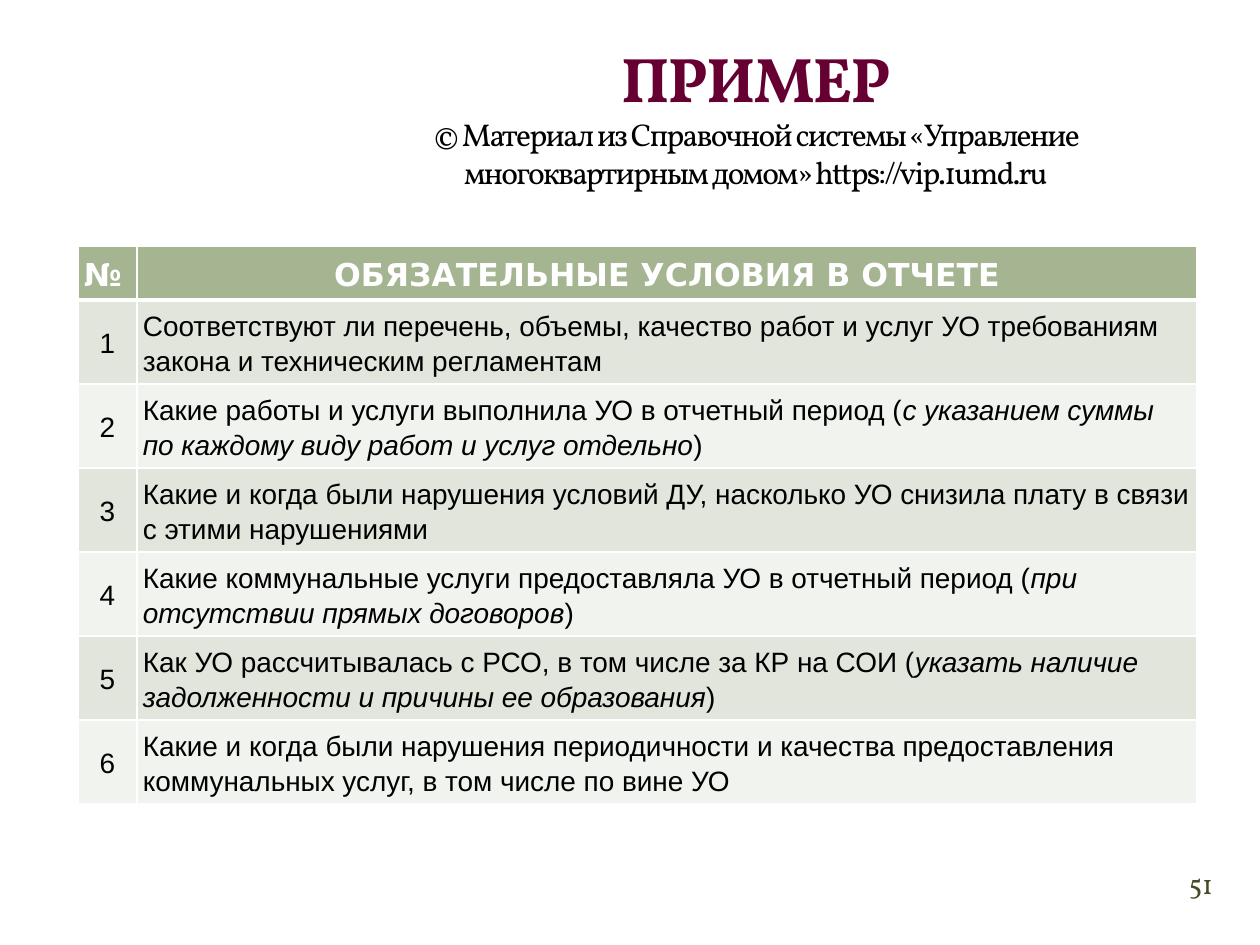
from dataclasses import dataclass

from lxml.etree import SubElement
from pptx import Presentation
from pptx.dml.color import RGBColor
from pptx.enum.text import MSO_ANCHOR, PP_ALIGN
from pptx.oxml.ns import qn
from pptx.util import Pt


@dataclass(frozen=True)
class Theme:
    serif: str = "Vollkorn"
    header_font: str = "DejaVu Sans"
    body_font: str = "Arial"
    title_size: int = 36
    text_size: int = 18
    small_size: int = 16
    title: str = "660033"
    text: str = "000000"
    number: str = "444D26"
    white: str = "FFFFFF"
    header_fill: str = "A5B592"
    row_fills: tuple = ("E1E5DC", "F0F3EE")


THEME = Theme()
HEADER = ("№", "ОБЯЗАТЕЛЬНЫЕ УСЛОВИЯ В ОТЧЕТЕ")
# Each condition: plain text, then an optional note set in italics
CONDITIONS = [
    ("Соответствуют ли перечень, объемы, качество работ и услуг УО "
     "требованиям закона и техническим регламентам", ""),
    ("Какие работы и услуги выполнила УО в отчетный период",
     "с указанием суммы по каждому виду работ и услуг отдельно"),
    ("Какие и когда были нарушения условий ДУ, насколько УО снизила плату "
     "в связи с этими нарушениями", ""),
    ("Какие коммунальные услуги предоставляла УО в отчетный период",
     "при отсутствии прямых договоров"),
    ("Как УО рассчитывалась с РСО, в том числе за КР на СОИ",
     "указать наличие задолженности и причины ее образования"),
    ("Какие и когда были нарушения периодичности и качества предоставления "
     "коммунальных услуг, в том числе по вине УО", ""),
]


def px(length):
    return round(length * 914400 / 126)


def style_font(font, size, color, name=None, bold=False):
    font.size = Pt(size)
    font.color.rgb = RGBColor.from_string(color)
    font.bold = bold
    if name:
        font.name = name


def add_text_box(slide, left, top, width, height, anchor):
    shape = slide.shapes.add_textbox(px(left), px(top), px(width), px(height))
    frame = shape.text_frame
    frame.word_wrap = True
    frame.vertical_anchor = anchor
    paragraph = frame.paragraphs[0]
    paragraph.alignment = PP_ALIGN.CENTER
    return frame, paragraph


def add_title(slide):
    paragraph = add_text_box(slide, 315, 21, 882, 176, MSO_ANCHOR.BOTTOM)[1]
    paragraph.font.name = THEME.serif
    heading = paragraph.add_run()
    heading.text = "ПРИМЕР"
    style_font(heading.font, THEME.title_size, THEME.title, THEME.serif, True)
    paragraph.add_line_break()
    credit = paragraph.add_run()
    credit.text = ("© Материал из Справочной системы «Управление "
                   "многоквартирным домом» https://vip.1umd.ru")
    style_font(credit.font, THEME.text_size, THEME.text, THEME.serif)
    for run in (heading, credit):
        run.font._element.set("spc", "-100")


def add_page_number(slide):
    frame, paragraph = add_text_box(slide, 1159, 852, 84, 63, MSO_ANCHOR.MIDDLE)
    frame.margin_left = frame.margin_right = 0
    frame.margin_top = frame.margin_bottom = 0
    paragraph.text = "51"
    style_font(paragraph.font, THEME.small_size, THEME.number, THEME.serif)


def set_borders(cell, bottom_width):
    # Borders come before the fill in the cell properties
    properties = cell._tc.get_or_add_tcPr()
    for side, width in (("L", 1), ("R", 1), ("T", 1), ("B", bottom_width)):
        line = SubElement(properties, qn(f"a:ln{side}"), w=str(Pt(width)))
        fill = SubElement(line, qn("a:solidFill"))
        SubElement(fill, qn("a:srgbClr"), val=THEME.white)


def prepare_cell(cell, fill, centered, bottom_width=1):
    set_borders(cell, bottom_width)
    cell.fill.solid()
    cell.fill.fore_color.rgb = RGBColor.from_string(fill)
    cell.margin_left = cell.margin_right = px(6)
    cell.margin_top = cell.margin_bottom = px(6)
    cell.vertical_anchor = MSO_ANCHOR.MIDDLE
    paragraph = cell.text_frame.paragraphs[0]
    paragraph.alignment = PP_ALIGN.CENTER if centered else PP_ALIGN.LEFT
    paragraph.line_spacing = 1.15
    return paragraph


def add_condition_text(paragraph, text, note):
    parts = [(text + " (", False), (note, True), (")", False)] if note else [(text, False)]
    for part, italic in parts:
        run = paragraph.add_run()
        run.text = part
        run.font.italic = italic


def add_conditions_table(slide):
    widths = (59, 1060)
    header_height, row_height = 54, 84
    count = len(CONDITIONS)
    table = slide.shapes.add_table(
        count + 1, len(widths), px(78), px(246), px(sum(widths)),
        px(header_height + count * row_height)).table
    for column, width in zip(table.columns, widths):
        column.width = px(width)
    for index, row in enumerate(table.rows):
        row.height = px(row_height if index else header_height)

    # Header row
    for index, label in enumerate(HEADER):
        paragraph = prepare_cell(table.cell(0, index), THEME.header_fill, index == 1, 3)
        paragraph.text = label
        style_font(paragraph.font, THEME.text_size, THEME.white, THEME.header_font, True)

    # Numbered conditions
    for number, (text, note) in enumerate(CONDITIONS, 1):
        fill = THEME.row_fills[(number - 1) % 2]
        number_paragraph = prepare_cell(table.cell(number, 0), fill, True)
        number_paragraph.text = str(number)
        text_paragraph = prepare_cell(table.cell(number, 1), fill, False)
        add_condition_text(text_paragraph, text, note)
        for paragraph in (number_paragraph, text_paragraph):
            style_font(paragraph.font, THEME.small_size, THEME.text, THEME.body_font)


def main():
    presentation = Presentation()
    presentation.slide_width = px(1260)
    presentation.slide_height = px(945)
    slide = presentation.slides.add_slide(presentation.slide_layouts[6])
    add_conditions_table(slide)
    add_page_number(slide)
    add_title(slide)
    presentation.save("out.pptx")


if __name__ == "__main__":
    main()
